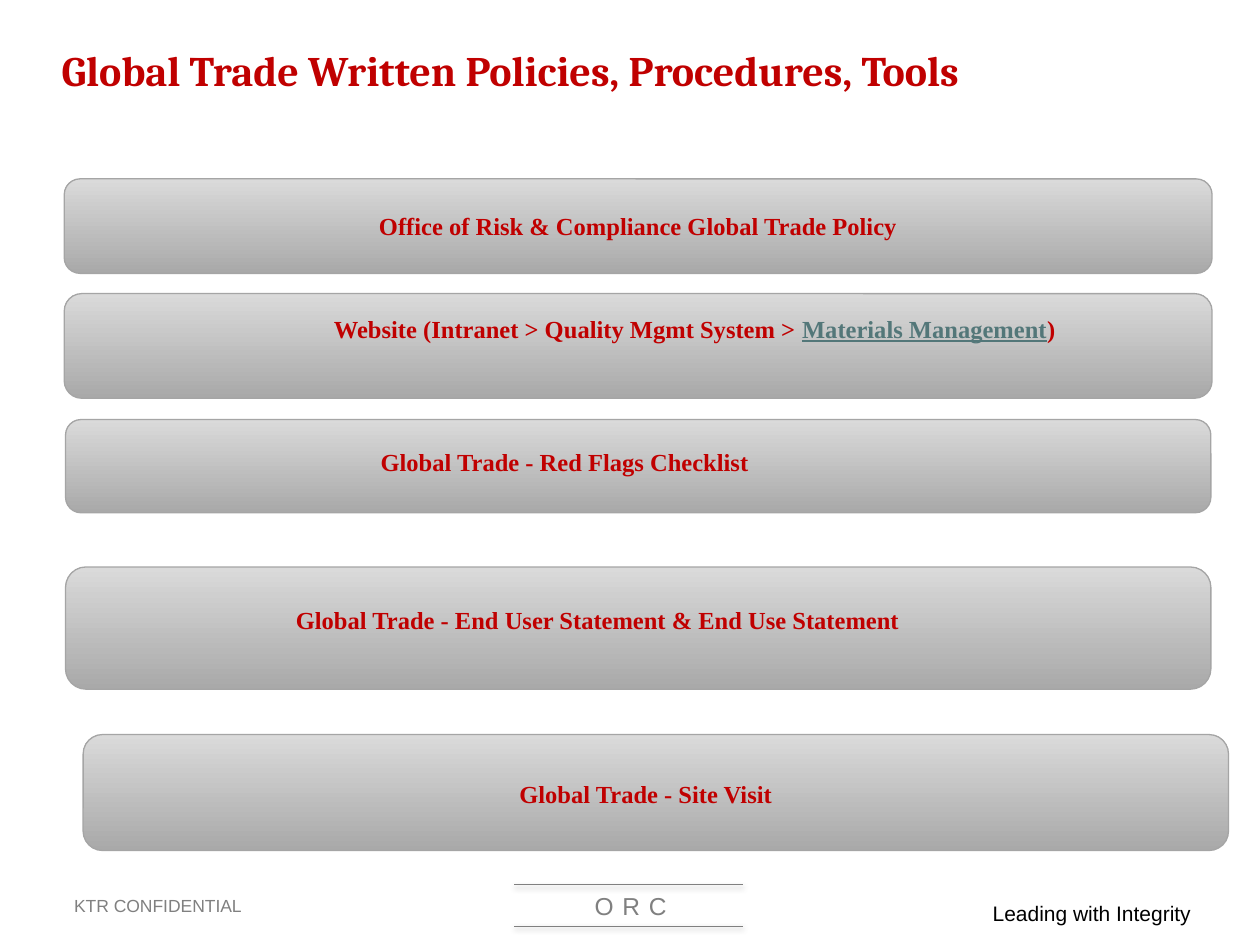
import pptx
import pptx.util
import pptx.dml.color
import pptx.enum.shapes
import pptx.enum.text
import pptx.oxml
import pptx.oxml.ns

WIDE, HIGH = pptx.util.Inches(10), pptx.util.Inches(7.5)
RED, GREY, TEAL = "C00000", "808080", "537779"
MID = pptx.enum.text.MSO_ANCHOR.MIDDLE
MAIN = {"name": "Times New Roman", "size": 14, "bold": True, "color": RED}
FOOT = {"name": "Arial", "size": 10, "color": GREY}
CENTER = pptx.enum.text.PP_ALIGN.CENTER
SHADE = (
    f'<a:effectLst {pptx.oxml.ns.nsdecls("a")}>'
    '<a:outerShdw blurRad="39370" dist="20320" dir="5400000">'
    '<a:srgbClr val="000000"><a:alpha val="38000"/></a:srgbClr>'
    '</a:outerShdw></a:effectLst>'
)


def paint(code):
    return pptx.dml.color.RGBColor.from_string(code)


def place(left, top, width, height):
    """Turn percent shares of the slide into lengths."""
    return [round(share * side / 100) for share, side in
            zip((left, top, width, height), (WIDE, HIGH, WIDE, HIGH))]


def style(font, form):
    for key, value in form.items():
        if key == "color":
            font.color.rgb = paint(value)
        else:
            setattr(font, key, pptx.util.Pt(value) if key == "size" else value)


def write(shape, runs, form, align=None, **frame):
    """Fill a shape with one paragraph of (text, changes) runs."""
    body = shape.text_frame
    for key, value in {"word_wrap": True, **frame}.items():
        setattr(body, key, value)
    para = body.paragraphs[0]
    para.alignment = align
    for text, change in runs:
        run = para.add_run()
        run.text = text
        style(run.font, {**form, **change})
    return para


def add_text(slide, area, text, form, align=None, **frame):
    box = slide.shapes.add_textbox(*place(*area))
    return write(box, [(text, {})], form, align, **frame)


def add_bar(slide, area):
    kind = pptx.enum.shapes.MSO_SHAPE.ROUNDED_RECTANGLE
    bar = slide.shapes.add_shape(kind, *place(*area))
    bar.shadow.inherit = False
    bar.fill.gradient()
    bar.fill.gradient_angle = 90
    for stop, code in zip(bar.fill.gradient_stops, ("A9A9A9", "DADADA")):
        stop.color.rgb = paint(code)
    bar.line.color.rgb = paint("A5A5A5")
    bar.line.width = pptx.util.Pt(0.75)
    return bar


def add_rule(slide, top):
    left, level, width, _ = place(40.8, top, 18.2, 0)
    kind = pptx.enum.shapes.MSO_CONNECTOR.STRAIGHT
    rule = slide.shapes.add_connector(kind, left, level, left + width, level)
    rule.line.color.rgb = paint(GREY)
    rule.line.width = pptx.util.Pt(0.5)
    rule._element.spPr.append(pptx.oxml.parse_xml(SHADE))


def add_foot(slide):
    add_text(slide, (4.9, 94, 16.3, 3.6), "KTR CONFIDENTIAL", FOOT,
             vertical_anchor=MID)
    mark = add_text(slide, (39.7, 93.6, 20.7, 4.53), "ORC",
                    {**FOOT, "size": 14}, CENTER)
    mark.runs[0].font._element.set("spc", "500")
    for top in (98, 93.6):
        add_rule(slide, top)
    add_text(slide, (77.8, 94.67, 17.9, 4), "Leading with Integrity",
             {**FOOT, "size": 12, "color": "000000"}, word_wrap=False)


def main():
    deck = pptx.Presentation()
    deck.slide_width, deck.slide_height = WIDE, HIGH
    slide = deck.slides.add_slide(deck.slide_layouts[6])
    add_foot(slide)

    # Title
    add_text(slide, (3.9, 1.07, 81.5, 12.67),
             "Global Trade Written Policies, Procedures, Tools",
             {"name": "Cambria", "size": 24, "bold": True, "color": RED},
             vertical_anchor=MID)

    # Bars that hold their own text
    bar = add_bar(slide, (5.1, 18.93, 91.1, 10))
    write(bar, [("Office of Risk & Compliance Global Trade Policy", {})],
          MAIN, CENTER, vertical_anchor=MID)
    bar = add_bar(slide, (5.1, 31.07, 91.1, 11.07))
    runs = [("Website (Intranet > Quality Mgmt System > ", {}),
            ("Materials Management", {"color": TEAL, "underline": True}),
            (")", {})]
    para = write(bar, runs, MAIN, pptx.enum.text.PP_ALIGN.LEFT,
                 vertical_anchor=MID,
                 margin_left=pptx.util.Inches(2.1),
                 margin_bottom=pptx.util.Inches(0.3))
    para.line_spacing = 0.9

    # Bars with a label laid over them
    inset = {"margin_left": pptx.util.Inches(1.1)}
    rows = [
        ((5.2, 44.4, 90.9, 9.87), (19.2, 46.67, 64.2, 7.6),
         "Global Trade - Red Flags Checklist", None, inset),
        ((5.2, 60, 90.9, 12.93), (15.8, 63.33, 63.3, 7.6),
         "Global Trade - End User Statement & End Use Statement", CENTER, {}),
        ((6.6, 77.73, 90.9, 12.27), (17.3, 81.73, 67.9, 4.53),
         "Global Trade - Site Visit", CENTER, {}),
    ]
    for area, spot, text, align, frame in rows:
        add_bar(slide, area)
        add_text(slide, spot, text, MAIN, align, **frame)

    deck.save("out.pptx")


if __name__ == "__main__":
    main()
